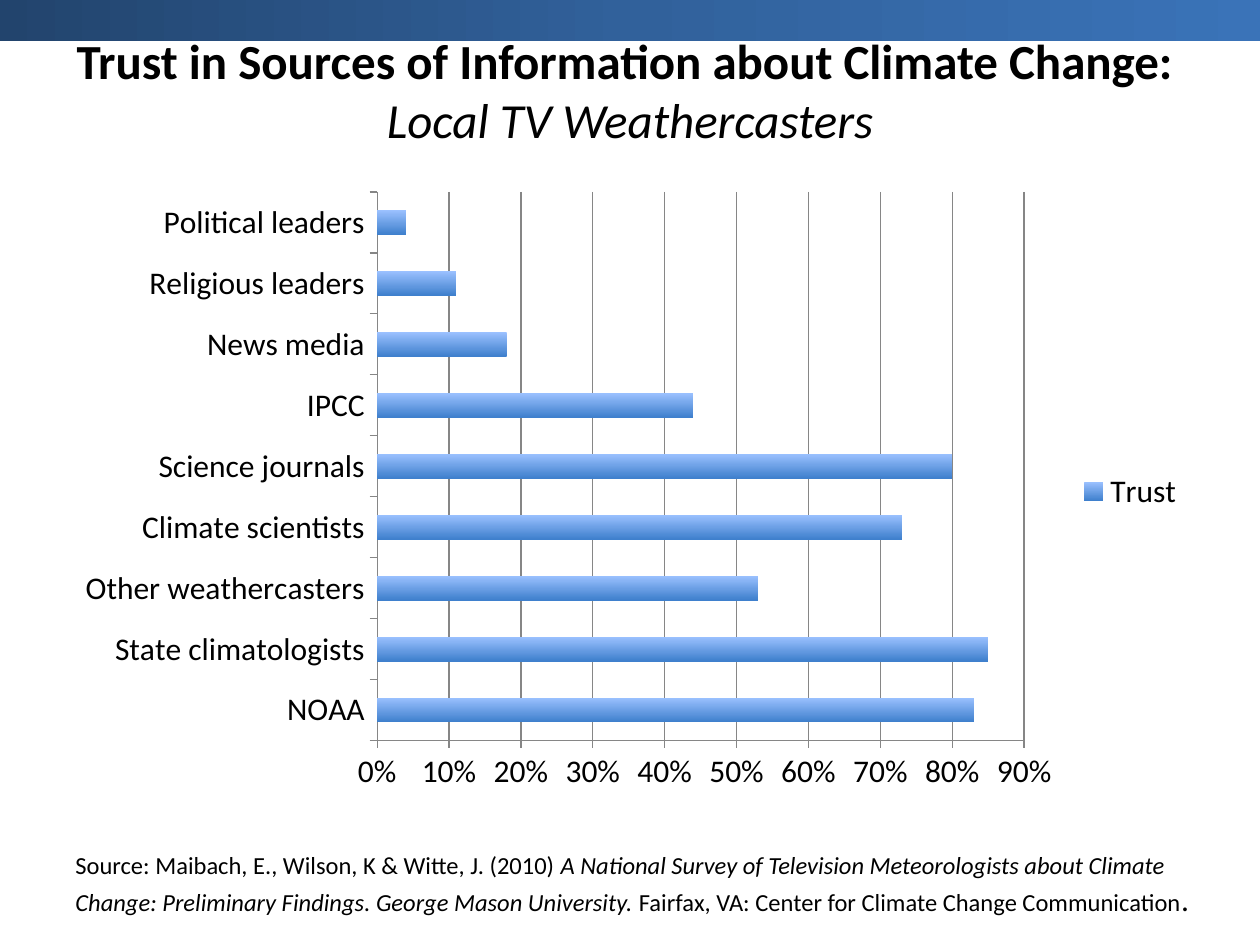
from dataclasses import dataclass

from lxml.etree import SubElement
from pptx import Presentation
from pptx.chart.data import CategoryChartData as Data
from pptx.dml.color import RGBColor as Rgb
from pptx.enum.chart import XL_CHART_TYPE as Kind, XL_LEGEND_POSITION as Side
from pptx.enum.chart import XL_TICK_MARK as Tick
from pptx.enum.shapes import MSO_SHAPE as Form
from pptx.enum.text import MSO_ANCHOR as Anchor, PP_ALIGN as Align
from pptx.oxml.ns import qn
from pptx.util import Inches, Pt

WIDE, HIGH = Inches(10), Inches(7.5)
FONT = "Calibri"
HUES = {
    "ink": "000000", "axis": "868686",
    "navy": "22446D", "steel": "31619B", "sky": "3A73B8",
    "pale": "9BC1FF", "deep": "3F80CD",
}
TRUST = {
    "NOAA": 0.83, "State climatologists": 0.85, "Other weathercasters": 0.53,
    "Climate scientists": 0.73, "Science journals": 0.8, "IPCC": 0.44,
    "News media": 0.18, "Religious leaders": 0.11, "Political leaders": 0.04,
}


@dataclass
class Box:
    left: float
    top: float
    width: float
    height: float

    def place(self) -> tuple[int, int, int, int]:
        return (int(self.left * WIDE), int(self.top * HIGH),
                int(self.width * WIDE), int(self.height * HIGH))


@dataclass
class Part:
    text: str
    bold: bool = False
    slant: bool = False
    size: float | None = None


def hue(name: str) -> Rgb:
    return Rgb.from_string(HUES[name])


def blend(fill, props, names: list[str], angle: float) -> None:
    fill.gradient()
    fill.gradient_angle = angle
    stops = props.find(qn("a:gradFill")).find(qn("a:gsLst"))
    for stop in list(stops):
        stops.remove(stop)
    step = 100000 // (len(names) - 1)
    for i, name in enumerate(names):
        stop = SubElement(stops, qn("a:gs"), pos=str(i * step))
        SubElement(stop, qn("a:srgbClr"), val=HUES[name])


def style(font, size: float) -> None:
    font.name = FONT
    font.size = Pt(size)
    font.color.rgb = hue("ink")


def write(slide, box: Box, lines: list[list[Part]], size: float,
          align: Align, anchor: Anchor) -> None:
    frame = slide.shapes.add_textbox(*box.place()).text_frame
    frame.word_wrap = True
    frame.vertical_anchor = anchor
    for i, parts in enumerate(lines):
        para = frame.paragraphs[0] if i == 0 else frame.add_paragraph()
        para.alignment = align
        style(para.font, size)
        for part in parts:
            run = para.add_run()
            run.text = part.text
            run.font.bold = part.bold
            run.font.italic = part.slant
            if part.size:
                run.font.size = Pt(part.size)


def plot(slide, box: Box) -> None:
    data = Data(number_format="0%")
    data.categories = list(TRUST)
    data.add_series("Trust", list(TRUST.values()))
    chart = slide.shapes.add_chart(
        Kind.BAR_CLUSTERED, *box.place(), data).chart
    style(chart.font, 18)
    chart.has_title = False
    chart.has_legend = True
    chart.legend.position = Side.RIGHT
    chart.legend.include_in_layout = False
    bars = chart.plots[0]
    bars.gap_width = 150
    bars.vary_by_categories = False
    row = bars.series[0]
    blend(row.format.fill, row._element.get_or_add_spPr(),
          ["pale", "deep"], 270)
    scale = chart.value_axis
    scale.minimum_scale, scale.maximum_scale = 0, 0.9
    scale.major_unit = 0.1
    scale.has_major_gridlines = True
    scale.tick_labels.number_format = "0%"
    scale.tick_labels.number_format_is_linked = False
    for axis in (scale, chart.category_axis):
        axis.major_tick_mark = Tick.OUTSIDE
    for item in (scale, chart.category_axis, scale.major_gridlines):
        item.format.line.color.rgb = hue("axis")
        item.format.line.width = Pt(0.75)


def band(slide, box: Box) -> None:
    bar = slide.shapes.add_shape(Form.RECTANGLE, *box.place())
    bar.shadow.inherit = False
    bar.line.fill.background()
    blend(bar.fill, bar._element.spPr, ["navy", "steel", "sky"], 0)


def main() -> None:
    deck = Presentation()
    deck.slide_width, deck.slide_height = WIDE, HIGH
    slide = deck.slides.add_slide(deck.slide_layouts[6])
    write(slide, Box(0, 0, 1, 0.19), [
        [Part("Trust in Sources of Information about Climate Change: ",
              bold=True)],
        [Part("Local TV Weathercasters", slant=True)],
    ], 28, Align.CENTER, Anchor.MIDDLE)
    plot(slide, Box(0.05, 0.19, 0.9, 0.66))
    write(slide, Box(0.05, 0.893, 0.95, 0.085), [[
        Part("Source: Maibach, E., Wilson, K & Witte, J. (2010) "),
        Part("A National Survey of Television Meteorologists about Climate "
             "Change: Preliminary Findings. George Mason University. ",
             slant=True),
        Part("Fairfax, VA: Center for Climate Change Communication"),
        Part(".", size=18),
    ]], 14, Align.LEFT, Anchor.TOP)
    band(slide, Box(0, 0, 1, 0.044))
    deck.save("out.pptx")


if __name__ == "__main__":
    main()
